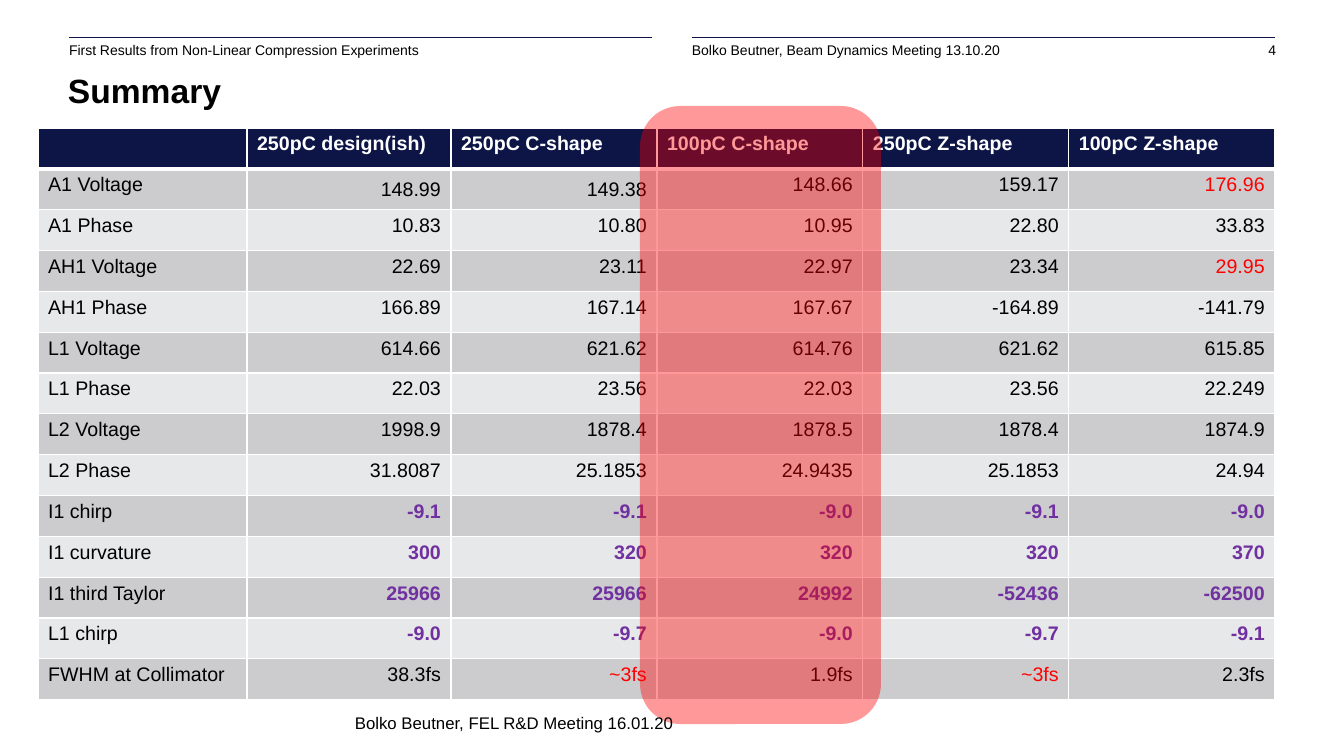
"""Build the summary slide comparing compression settings in a table."""
from lxml.etree import SubElement
from pptx import Presentation
from pptx.dml.color import RGBColor
from pptx.enum.shapes import MSO_CONNECTOR, MSO_SHAPE
from pptx.enum.text import MSO_ANCHOR as Anchor, MSO_AUTO_SIZE as AutoSize, PP_ALIGN as Align
from pptx.oxml.ns import qn
from pptx.util import Pt

PX = 914400 / 100.8
NAVY, BLACK, WHITE, RED, PURPLE = "0D1546", "000000", "FFFFFF", "FF0000", "7030A0"
BANDS = ["CCCCCF", "E7E8E9"]


def px(*lengths):
    return [round(length * PX) for length in lengths]


def add_run(paragraph, text, size, color=BLACK, bold=False):
    run = paragraph.add_run()
    run.text = text
    run.font.name = "Arial"
    run.font.size = Pt(size)
    run.font.bold = bold
    run.font.color.rgb = RGBColor.from_string(color)


presentation = Presentation()
presentation.slide_width, presentation.slide_height = px(1344, 756)
slide = presentation.slides.add_slide(presentation.slide_layouts[5])
shapes = slide.shapes

for left, right in [(69, 652), (692, 1275)]:
    rule = shapes.add_connector(MSO_CONNECTOR.STRAIGHT, *px(left, 37, right, 37))
    rule.line.color.rgb = RGBColor.from_string(NAVY)
    rule.line.width = Pt(0.5)
    SubElement(rule._element.spPr, qn("a:effectLst"))

header_texts = [
    ("First Results from Non-Linear Compression Experiments", 69, 583, Align.LEFT),
    ("Bolko Beutner, Beam Dynamics Meeting 13.10.20", 692, 562, Align.LEFT),
    ("4", 1220, 56, Align.RIGHT),
]
for text, left, width, alignment in header_texts:
    frame = shapes.add_textbox(*px(left, 42, width, 24)).text_frame
    frame.margin_left = frame.margin_right = frame.margin_top = frame.margin_bottom = 0
    frame.word_wrap = True
    frame.paragraphs[0].alignment = alignment
    add_run(frame.paragraphs[0], text, 10)

title = shapes.title
title.left, title.top, title.width, title.height = px(68, 68, 1208, 42)
frame = title.text_frame
frame.margin_left = frame.margin_right = frame.margin_top = frame.margin_bottom = 0
frame.vertical_anchor = Anchor.BOTTOM
frame.paragraphs[0].alignment = Align.LEFT
add_run(frame.paragraphs[0], "Summary", 24, bold=True)

rows = [
    ["", "250pC design(ish)", "250pC C-shape", "100pC C-shape", "250pC Z-shape", "100pC Z-shape"],
    ["A1 Voltage", "148.99", "149.38", "148.66", "159.17", "176.96"],
    ["A1 Phase", "10.83", "10.80", "10.95", "22.80", "33.83"],
    ["AH1 Voltage", "22.69", "23.11", "22.97", "23.34", "29.95"],
    ["AH1 Phase", "166.89", "167.14", "167.67", "-164.89", "-141.79"],
    ["L1 Voltage", "614.66", "621.62", "614.76", "621.62", "615.85"],
    ["L1 Phase", "22.03", "23.56", "22.03", "23.56", "22.249"],
    ["L2 Voltage", "1998.9", "1878.4", "1878.5", "1878.4", "1874.9"],
    ["L2 Phase", "31.8087", "25.1853", "24.9435", "25.1853", "24.94"],
    ["I1 chirp", "-9.1", "-9.1", "-9.0", "-9.1", "-9.0"],
    ["I1 curvature", "300", "320", "320", "320", "370"],
    ["I1 third Taylor", "25966", "25966", "24992", "-52436", "-62500"],
    ["L1 chirp", "-9.0", "-9.7", "-9.0", "-9.7", "-9.1"],
    ["FWHM at Collimator", "38.3fs", "~3fs", "1.9fs", "~3fs", "2.3fs"],
]
red_values = {"176.96", "29.95", "~3fs"}
purple_rows = range(9, 13)

table = shapes.add_table(len(rows), len(rows[0]), *px(38, 128, 1237, 572)).table
for column, width in zip(table.columns, px(209, 204, 206, 206, 206, 206)):
    column.width = width

for row_index, row in enumerate(rows):
    for column_index, text in enumerate(row):
        cell = table.cell(row_index, column_index)
        properties = cell._tc.get_or_add_tcPr()
        for side in ["lnL", "lnR", "lnT", "lnB"]:
            thick = (row_index, side) in [(0, "lnB"), (1, "lnT")]
            border = SubElement(properties, qn(f"a:{side}"), w=str(Pt(3 if thick else 1)))
            border_fill = SubElement(border, qn("a:solidFill"))
            SubElement(border_fill, qn("a:srgbClr"), val=WHITE)
        cell.fill.solid()
        fill_color = BANDS[(row_index - 1) % 2] if row_index else NAVY
        cell.fill.fore_color.rgb = RGBColor.from_string(fill_color)
        if row_index == 1 and column_index in (1, 2):
            cell.vertical_anchor = Anchor.MIDDLE

        purple = row_index in purple_rows and column_index > 0
        color = BLACK
        if row_index == 0:
            color = WHITE
        elif purple:
            color = PURPLE
        elif text in red_values:
            color = RED
        paragraph = cell.text_frame.paragraphs[0]
        paragraph.alignment = Align.RIGHT if row_index and column_index else Align.LEFT
        if text:
            add_run(paragraph, text, 14, color, bold=row_index == 0 or purple)

highlight = shapes.add_shape(MSO_SHAPE.ROUNDED_RECTANGLE, *px(640, 106, 241, 618))
highlight.shadow.inherit = False
highlight.line.fill.background()
highlight.fill.solid()
highlight.fill.fore_color.rgb = RGBColor.from_string(RED)
highlight_color = highlight._element.spPr.find(qn("a:solidFill")).find(qn("a:srgbClr"))
SubElement(highlight_color, qn("a:alpha"), val="40000")

frame = shapes.add_textbox(*px(345, 708, 342, 30)).text_frame
frame.word_wrap = False
frame.auto_size = AutoSize.SHAPE_TO_FIT_TEXT
add_run(frame.paragraphs[0], "Bolko Beutner, FEL R&D Meeting 16.01.20", 12)

presentation.save("out.pptx")
